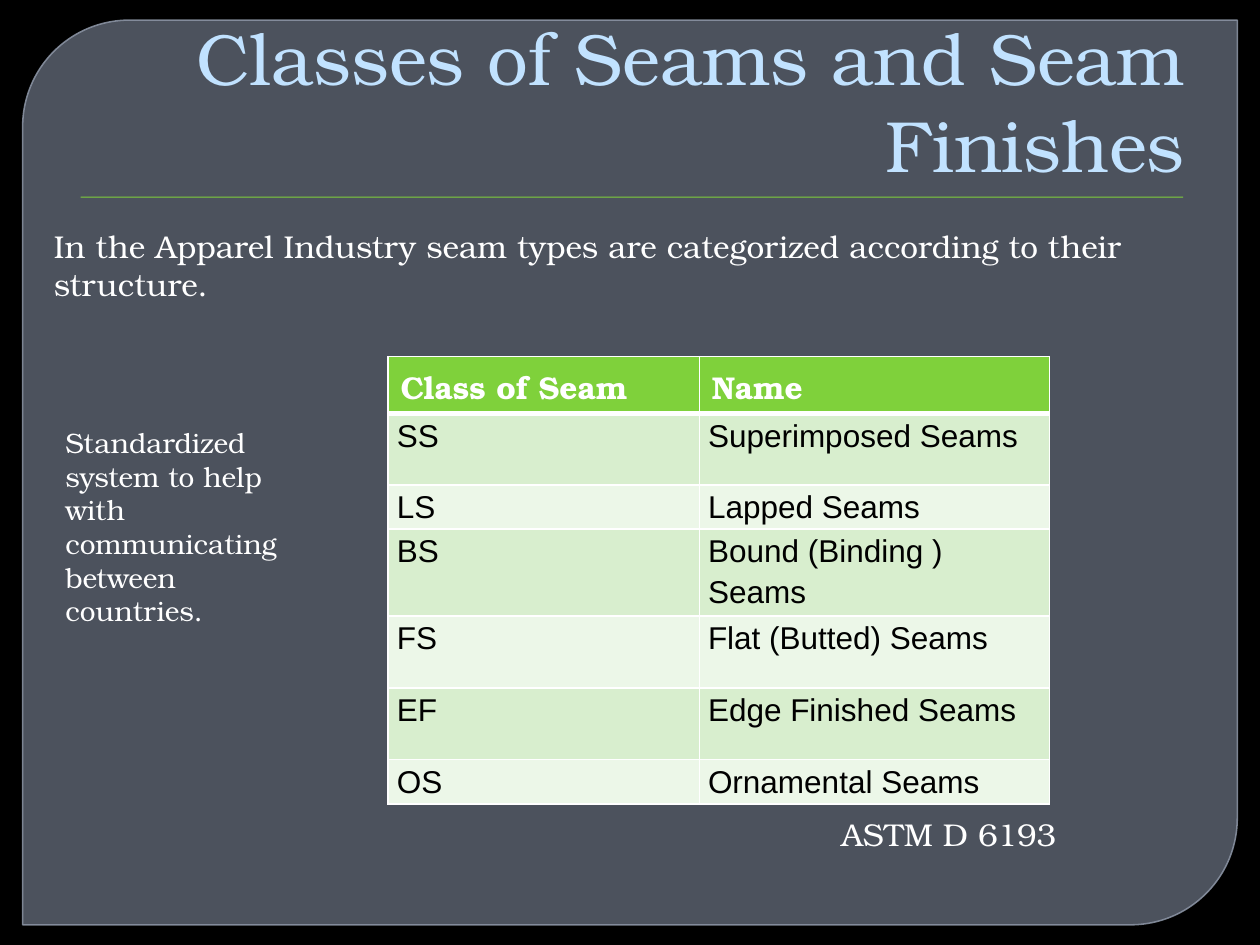
from pptx import Presentation
from pptx.dml.color import RGBColor
from pptx.enum.shapes import MSO_SHAPE as Shape
from pptx.enum.text import MSO_ANCHOR as Anchor, PP_ALIGN as Align
from pptx.oxml import parse_xml
from pptx.oxml.ns import nsdecls
from pptx.util import Inches, Pt

COLORS = {
    "background": "000000",
    "panel": "767F8F",
    "panel_line": "8B94A4",
    "green": "7FD13B",
    "title": "C1E2FF",
    "white": "FFFFFF",
    "black": "000000",
    "dark_band": "D8EECE",
    "light_band": "ECF7E8",
}
SERIF = "TeX Gyre Bonum"
SANS = "Arial"
SEAMS = [
    ("Class of Seam", "Name"),
    ("SS", "Superimposed Seams"),
    ("LS", "Lapped Seams"),
    ("BS", "Bound (Binding ) Seams"),
    ("FS", "Flat (Butted) Seams"),
    ("EF", "Edge Finished Seams"),
    ("OS", "Ornamental Seams"),
]
COLUMN_WIDTHS = [2.47, 2.78]
ROW_HEIGHTS = [0.45, 0.57, 0.35, 0.57, 0.57, 0.57, 0.35]


def rgb(name):
    return RGBColor.from_string(COLORS[name])


def box(left, top, width, height):
    return Inches(left), Inches(top), Inches(width), Inches(height)


def set_alpha(fill_element, percent):
    color = fill_element.find(".//{*}srgbClr")
    color.append(parse_xml(f'<a:alpha {nsdecls("a")} val="{percent * 1000}"/>'))


def add_run(paragraph, text, size, color, font=SERIF, bold=False):
    run = paragraph.add_run()
    run.text = text
    run.font.name = font
    run.font.size = Pt(size)
    run.font.bold = bold
    run.font.color.rgb = rgb(color)


def add_text(slide, place, text, size, color="white", align=Align.LEFT, anchor=Anchor.TOP):
    frame = slide.shapes.add_textbox(*box(*place)).text_frame
    frame.word_wrap = True
    frame.vertical_anchor = anchor
    paragraph = frame.paragraphs[0]
    paragraph.alignment = align
    add_run(paragraph, text, size, color)


def add_filled_shape(slide, kind, place, color):
    shape = slide.shapes.add_shape(kind, *box(*place))
    shape.shadow.inherit = False
    shape.fill.solid()
    shape.fill.fore_color.rgb = rgb(color)
    shape.line.fill.background()
    return shape


def add_panel(slide):
    panel = add_filled_shape(
        slide, Shape.ROUND_2_DIAG_RECTANGLE, (0.18, 0.16, 9.64, 7.18), "panel")
    panel.adjustments[0] = 0.118
    panel.adjustments[1] = 0
    set_alpha(panel.element.spPr.find("{*}solidFill"), 65)
    panel.line.color.rgb = rgb("panel_line")
    panel.line.width = Pt(0.87)
    set_alpha(panel.element.spPr.find("{*}ln"), 88)


def set_borders(cell, bottom_width):
    properties = cell._tc.get_or_add_tcPr()
    widths = {"lnL": 1, "lnR": 1, "lnT": 1, "lnB": bottom_width}
    for position, (side, width) in enumerate(widths.items()):
        properties.insert(position, parse_xml(
            f'<a:{side} {nsdecls("a")} w="{Pt(width)}"><a:solidFill>'
            f'<a:srgbClr val="{COLORS["white"]}"/></a:solidFill></a:{side}>'))


def fill_cell(cell, text, row):
    paragraph = cell.text_frame.paragraphs[0]
    cell.fill.solid()
    if row == 0:
        cell.fill.fore_color.rgb = rgb("green")
        cell.vertical_anchor = Anchor.MIDDLE
        add_run(paragraph, text, 18, "white", bold=True)
    else:
        cell.fill.fore_color.rgb = rgb("dark_band" if row % 2 else "light_band")
        cell.margin_left = cell.margin_right = Inches(0.07)
        cell.margin_top = cell.margin_bottom = 0
        paragraph.line_spacing = 1.15
        add_run(paragraph, text, 18, "black", SANS)
    set_borders(cell, 3 if row == 0 else 1)


def add_seam_table(slide):
    place = box(3.08, 2.83, sum(COLUMN_WIDTHS), sum(ROW_HEIGHTS))
    table = slide.shapes.add_table(len(SEAMS), len(COLUMN_WIDTHS), *place).table
    for column, width in zip(table.columns, COLUMN_WIDTHS):
        column.width = Inches(width)
    for row, height in zip(table.rows, ROW_HEIGHTS):
        row.height = Inches(height)
    for row, texts in enumerate(SEAMS):
        for column, text in enumerate(texts):
            fill_cell(table.cell(row, column), text, row)


def main():
    presentation = Presentation()
    presentation.slide_width = Inches(10)
    presentation.slide_height = Inches(7.5)
    slide = presentation.slides.add_slide(presentation.slide_layouts[6])
    slide.background.fill.solid()
    slide.background.fill.fore_color.rgb = rgb("background")

    add_panel(slide)
    add_filled_shape(slide, Shape.RECTANGLE, (0.64, 1.56, 8.75, 0.01), "green")
    add_text(slide, (0.5, 0.28, 9, 1.25), "Classes of Seams and Seam Finishes",
             41.4, "title", Align.RIGHT, Anchor.BOTTOM)
    add_seam_table(slide)
    add_text(slide, (6.58, 6.42, 1.92, 0.4), "ASTM D 6193", 18)
    add_text(slide, (0.33, 1.75, 9.25, 1.01),
             "In the Apparel Industry seam types are categorized according to their structure.", 18)
    add_text(slide, (0.42, 3.33, 2.08, 1.72),
             "Standardized system to help with communicating between countries.", 16)
    presentation.save("out.pptx")


if __name__ == "__main__":
    main()
